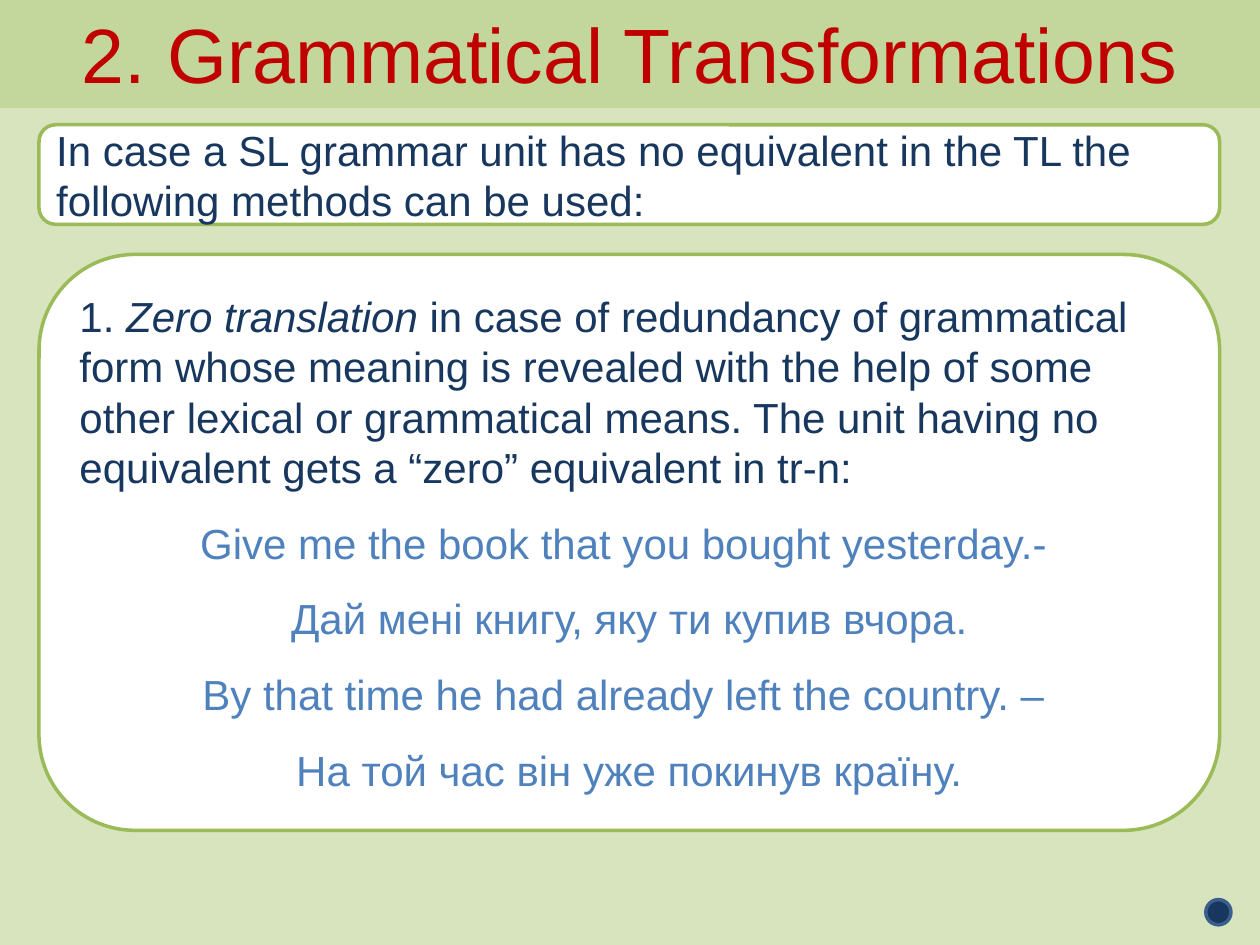
from pptx import Presentation
from pptx.dml.color import RGBColor
from pptx.enum.shapes import MSO_SHAPE as SHAPE
from pptx.enum.text import MSO_ANCHOR, PP_ALIGN
from pptx.util import Inches, Pt

COLORS = {
    "background": "D7E4BD",
    "band": "C3D69B",
    "title": "C00000",
    "white": "FFFFFF",
    "border": "9BBB59",
    "navy": "17375E",
    "dot_line": "3A5F8C",
    "example": "4F81BD",
}


def add_box(kind, left, top, width, height, fill, line):
    sp = s.shapes.add_shape(kind, Inches(left), Inches(top), Inches(width), Inches(height))
    sp.shadow.inherit = False
    sp.fill.solid()
    sp.fill.fore_color.rgb = RGBColor.from_string(COLORS[fill])
    sp.line.color.rgb = RGBColor.from_string(COLORS[line])
    sp.line.width = Pt(2)
    sp.text_frame.word_wrap = True
    sp.text_frame.vertical_anchor = MSO_ANCHOR.MIDDLE
    return sp


def add_text(p, text, color, size=24, align=PP_ALIGN.LEFT, italic=False):
    p.alignment = align
    r = p.add_run()
    r.text = text
    r.font.name = "Arial"
    r.font.size = Pt(size)
    r.font.italic = italic
    r.font.color.rgb = RGBColor.from_string(COLORS[color])


prs = Presentation()
prs.slide_width = Inches(10)
prs.slide_height = Inches(7.5)
s = prs.slides.add_slide(prs.slide_layouts[6])
s.background.fill.solid()
s.background.fill.fore_color.rgb = RGBColor.from_string(COLORS["background"])

title = add_box(SHAPE.RECTANGLE, 0, 0, 10, 0.84, "band", "band")
add_text(title.text_frame.paragraphs[0], "2. Grammatical Transformations", "title", 44, PP_ALIGN.CENTER)

intro = add_box(SHAPE.ROUNDED_RECTANGLE, 0.31, 0.99, 9.37, 0.79, "white", "border")
add_text(
    intro.text_frame.paragraphs[0],
    "In case a SL grammar unit has no equivalent in the TL the following methods can be used:",
    "navy",
)

add_box(SHAPE.OVAL, 9.57, 7.14, 0.2, 0.2, "navy", "dot_line")

method = add_box(SHAPE.ROUNDED_RECTANGLE, 0.31, 2.02, 9.37, 4.57, "white", "border")
tf = method.text_frame
for text, italic in [
    ("1. ", False),
    ("Zero translation ", True),
    (
        "in case of redundancy of grammatical form whose meaning is revealed with the help of "
        "some other lexical or grammatical means. The unit having no equivalent gets a “zero” "
        "equivalent in tr-n:",
        False,
    ),
]:
    add_text(tf.paragraphs[0], text, "navy", italic=italic)

for text in [
    "Give me the book that you bought yesterday.- ",
    "Дай мені книгу, яку ти купив вчора.",
    "By that time he had already left the country. – ",
    "На той час він уже покинув країну.",
]:
    p = tf.add_paragraph()
    p.line_spacing = 1.5
    add_text(p, text, "example", align=PP_ALIGN.CENTER)

prs.save("out.pptx")
